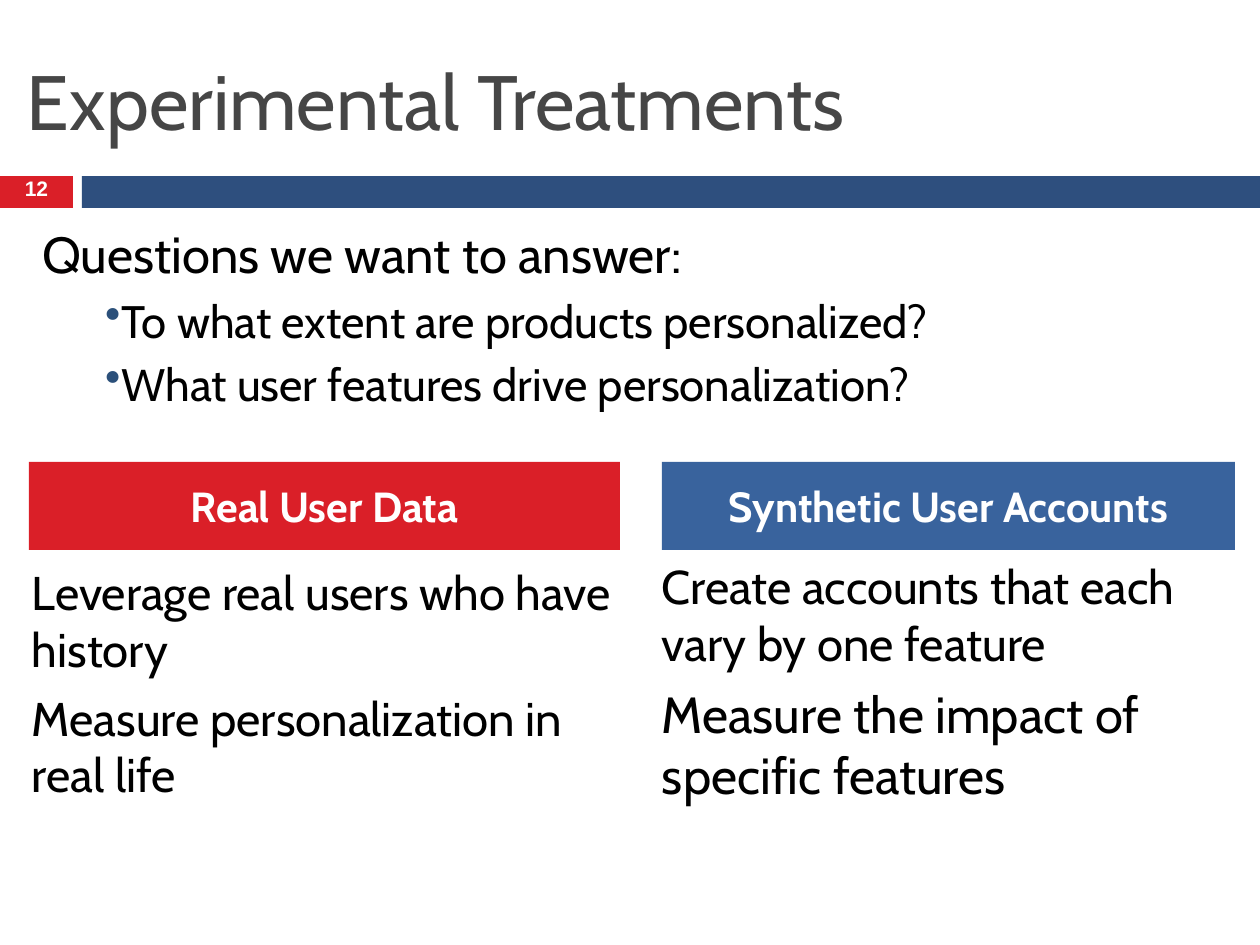
import pptx
import pptx.dml.color
import pptx.enum.shapes
import pptx.enum.text
import pptx.oxml
import pptx.oxml.ns
import pptx.util

THEME = {
    "red": "DA1F28", "band": "2E4F7E", "blue": "39639D", "bullet": "2B507A",
    "title": "464646", "text": "000000", "white": "FFFFFF",
    "font": "Cabin", "number_font": "Arial",
    "title_size": 44, "lead_size": 29, "point_size": 26,
    "body_size": 27, "header_size": 24, "number_size": 12,
}
SCALE = pptx.util.Inches(10) / 1260

TITLE = "Experimental Treatments"
PAGE_NUMBER = "12"
LEAD = "Questions we want to answer:"
QUESTIONS = [
    "To what extent are products personalized?",
    "What user features drive personalization?",
]
TREATMENTS = [
    {
        "header": "Real User Data", "fill": "red",
        "bar": (29, 462, 591, 88), "body": (26, 557, 591, 272), "inset": 6,
        "points": [
            ("Leverage real users who have history", "body_size"),
            ("Measure personalization in real life", "body_size"),
        ],
    },
    {
        "header": "Synthetic User Accounts", "fill": "blue",
        "bar": (662, 462, 573, 88), "body": (662, 557, 572, 320), "inset": 0,
        "points": [
            ("Create accounts that each vary by one feature", "body_size"),
            ("Measure the impact of specific features", "lead_size"),
        ],
    },
]


def px(length):
    return round(length * SCALE)


def color(name):
    return pptx.dml.color.RGBColor.from_string(THEME[name])


def add_bar(slide, box, fill):
    bar = slide.shapes.add_shape(
        pptx.enum.shapes.MSO_SHAPE.RECTANGLE, *map(px, box))
    bar.shadow.inherit = False
    bar.fill.solid()
    bar.fill.fore_color.rgb = color(fill)
    bar.line.fill.background()
    return bar


def add_area(slide, box):
    return slide.shapes.add_textbox(*map(px, box))


def set_frame(area, inset=0, middle=False):
    frame = area.text_frame
    frame.word_wrap = True
    frame.margin_left = frame.margin_right = px(inset)
    frame.margin_top = frame.margin_bottom = px(inset)
    anchor = pptx.enum.text.MSO_ANCHOR
    frame.vertical_anchor = anchor.MIDDLE if middle else anchor.TOP


def write(area, text, size, ink="text", font="font", bold=False,
          centered=False, before=0, spacing=None, bullet=False):
    frame = area.text_frame
    paragraph = frame.paragraphs[0]
    if paragraph.runs:
        paragraph = frame.add_paragraph()
    align = pptx.enum.text.PP_ALIGN
    paragraph.alignment = align.CENTER if centered else align.LEFT
    paragraph.space_before = pptx.util.Pt(before)
    if spacing:
        paragraph.line_spacing = spacing
    if bullet:
        paragraph.level = 1
        properties = paragraph._p.get_or_add_pPr()
        properties.set("marL", str(px(63)))
        properties.set("indent", "0")
        namespace = pptx.oxml.ns.nsdecls("a")
        for xml in (
            f'<a:buClr {namespace}><a:srgbClr val="{THEME["bullet"]}"/></a:buClr>',
            f'<a:buChar {namespace} char="•"/>',
        ):
            properties.append(pptx.oxml.parse_xml(xml))
    run = paragraph.add_run()
    run.text = text
    run.font.name = THEME[font]
    run.font.size = pptx.util.Pt(THEME[size])
    run.font.bold = bold
    run.font.color.rgb = color(ink)


def main():
    deck = pptx.Presentation()
    deck.slide_width, deck.slide_height = px(1260), px(945)
    slide = deck.slides.add_slide(deck.slide_layouts[6])

    add_bar(slide, (0, 176, 73, 32), "red")
    add_bar(slide, (82, 176, 1178, 32), "band")

    title = add_area(slide, (21, 0, 1218, 199))
    set_frame(title, inset=6, middle=True)
    write(title, TITLE, "title_size", ink="title")

    number = add_area(slide, (0, 173, 73, 35))
    set_frame(number, inset=6, middle=True)
    write(number, PAGE_NUMBER, "number_size", ink="white", font="number_font",
          bold=True, centered=True, spacing=0.8)

    questions = add_area(slide, (42, 223, 1179, 212))
    set_frame(questions)
    write(questions, LEAD, "lead_size", before=7)
    for question in QUESTIONS:
        write(questions, question, "point_size", before=5, bullet=True)

    for treatment in TREATMENTS:
        header = add_bar(slide, treatment["bar"], treatment["fill"])
        set_frame(header, middle=True)
        write(header, treatment["header"], "header_size", ink="white",
              bold=True, centered=True, before=7)
        body = add_area(slide, treatment["body"])
        set_frame(body, inset=treatment["inset"])
        for point, size in treatment["points"]:
            write(body, point, size, before=7)

    deck.save("out.pptx")


if __name__ == "__main__":
    main()
